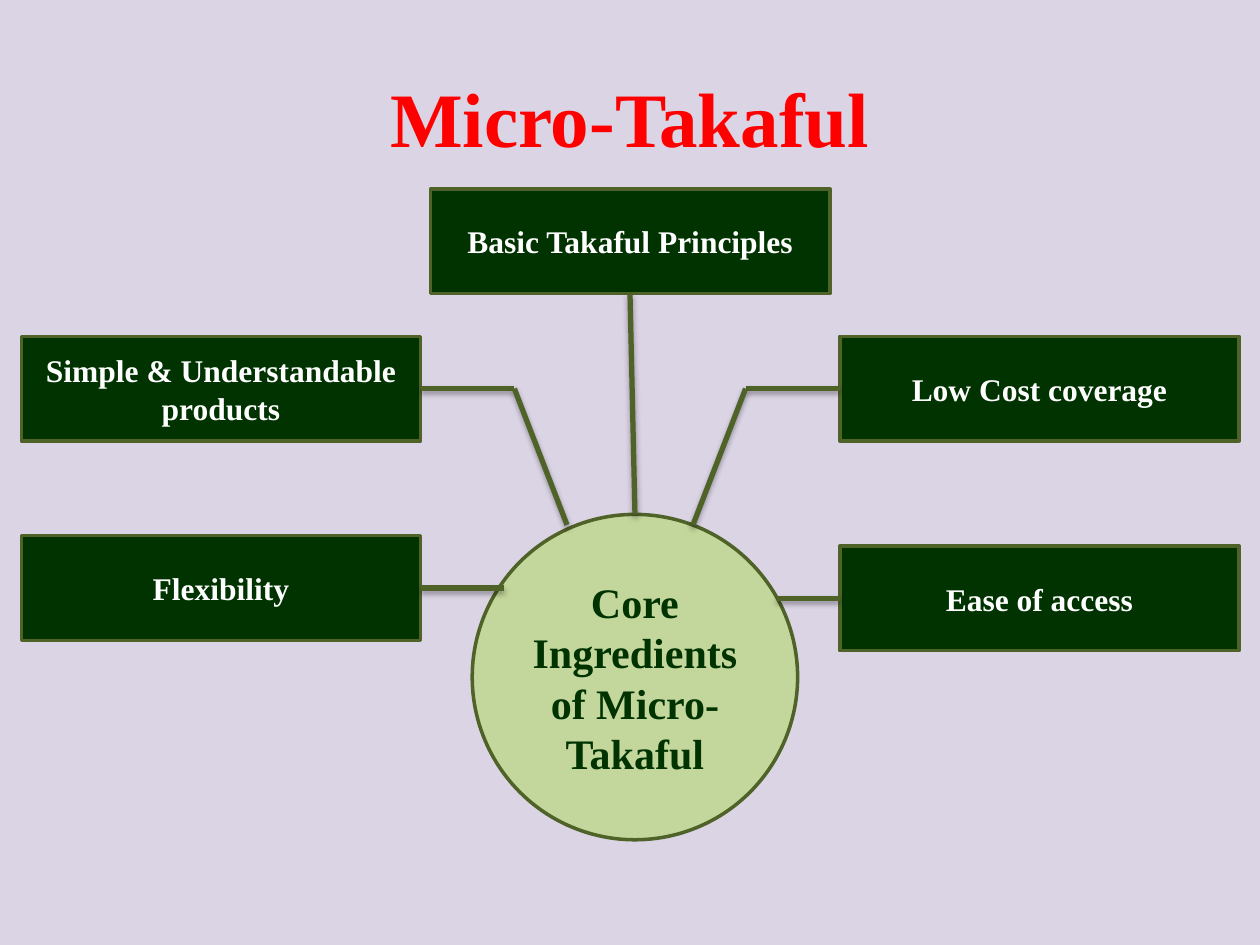
from lxml import etree
from pptx import Presentation
from pptx import util as u
from pptx.dml import color
from pptx.enum import shapes, text
from pptx.oxml import ns

FONT = "Times New Roman"
DARK, OLIVE, LIGHT = "003300", "4F6228", "C3D69B"
BOX_W, BOX_H = 8.05, 2.11
LEFT_X, RIGHT_X = 0.43, 16.93


def paint(fmt, value):
    """Give a fill a solid colour from a hex string."""
    fmt.solid()
    fmt.fore_color.rgb = color.RGBColor.from_string(value)


def write(sp, words, size, value):
    """Put one centred bold run in a shape."""
    tf = sp.text_frame
    tf.word_wrap = True
    tf.vertical_anchor = text.MSO_ANCHOR.MIDDLE
    p = tf.paragraphs[0]
    p.alignment = text.PP_ALIGN.CENTER
    r = p.add_run()
    r.text = words
    r.font.name, r.font.size, r.font.bold = FONT, u.Pt(size), True
    paint(r.font.fill, value)


def add_title(s, box, words):
    """Place the slide title in the given box."""
    sp = s.shapes.add_textbox(*map(u.Cm, box))
    write(sp, words, 44, "FF0000")


def add_node(s, kind, box, words, size, fill, ink):
    """Place an outlined shape with a label in the given box."""
    sp = s.shapes.add_shape(kind, *map(u.Cm, box))
    sp.shadow.inherit = False
    paint(sp.fill, fill)
    paint(sp.line.fill, OLIVE)
    sp.line.width = u.Pt(2)
    write(sp, words, size, ink)


def add_shadow(sp):
    """Give a connector a soft shadow below it."""
    effects = etree.SubElement(sp._element.spPr, ns.qn("a:effectLst"))
    shadow = etree.SubElement(effects, ns.qn("a:outerShdw"), blurRad="40000",
                              dist="23000", dir="5400000", rotWithShape="0")
    black = etree.SubElement(shadow, ns.qn("a:srgbClr"), val="000000")
    etree.SubElement(black, ns.qn("a:alpha"), val="35000")


def add_branch(s, points):
    """Join successive points with straight connectors."""
    for start, end in zip(points, points[1:]):
        sp = s.shapes.add_connector(shapes.MSO_CONNECTOR.STRAIGHT,
                                    *map(u.Cm, start + end))
        paint(sp.line.fill, OLIVE)
        sp.line.width = u.Pt(3)
        add_shadow(sp)


def add_diagram(s, box):
    """Place the hub, its five ingredients and their branches in the given box."""
    x, y, w, h = box
    mid = BOX_H / 2
    right = RIGHT_X - x
    inner = LEFT_X - x + BOX_W
    ingredients = [
        ("Basic Takaful Principles", 8.68 - x, 0,
         [(w / 2, BOX_H), (w / 2 + 0.1, 6.56)]),
        ("Flexibility", LEFT_X - x, 6.99,
         [(inner, 6.99 + mid), (10.16 - x, 6.99 + mid)]),
        ("Simple & Understandable products", LEFT_X - x, 2.97,
         [(inner, 2.97 + mid), (10.37 - x, 2.97 + mid), (11.43 - x, 6.77)]),
        ("Ease of access", right, 7.2,
         [(right, 7.2 + mid), (15.66 - x, 7.2 + mid)]),
        ("Low Cost coverage", right, 2.97,
         [(right, 2.97 + mid), (15.03 - x, 2.97 + mid), (13.97 - x, 6.77)]),
    ]
    for words, left, top, _ in ingredients:
        add_node(s, shapes.MSO_SHAPE.RECTANGLE,
                 (x + left, y + top, BOX_W, BOX_H), words, 18, DARK, "FFFFFF")
    hub = 6.56
    add_node(s, shapes.MSO_SHAPE.OVAL,
             (x + w / 2 + 0.1 - hub / 2, y + h - hub, hub, hub),
             "Core Ingredients of Micro-Takaful", 24, LIGHT, DARK)
    for *_, points in ingredients:
        add_branch(s, [(x + px, y + py) for px, py in points])


def main():
    """Build and save the slide."""
    prs = Presentation()
    prs.slide_width, prs.slide_height = u.Cm(25.4), u.Cm(19.05)
    s = prs.slides.add_slide(prs.slide_layouts[6])
    paint(s.background.fill, "DBD4E5")
    add_title(s, (1.27, 0.76, 22.86, 3.18), "Micro-Takaful")
    add_diagram(s, (0.43, 3.81, 24.54, 13.12))
    prs.save("out.pptx")


if __name__ == "__main__":
    main()
